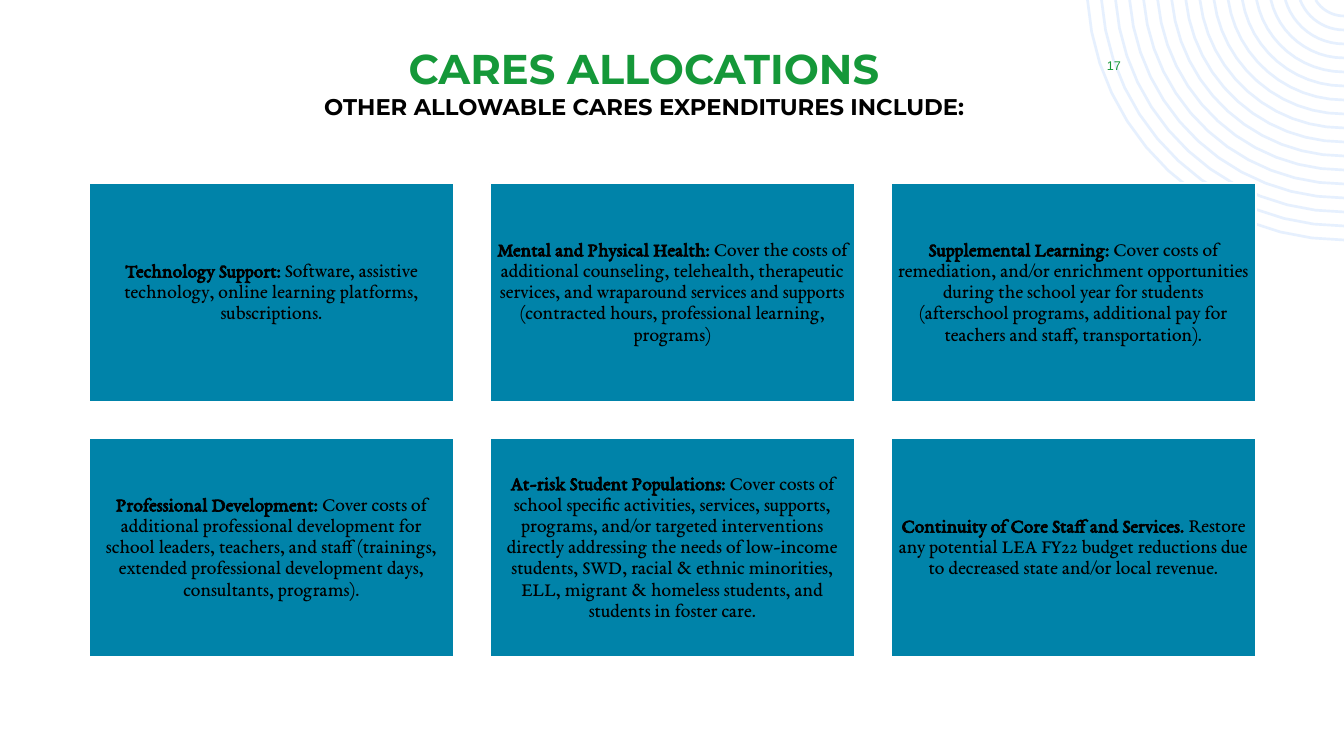
import math

import pptx
import pptx.dml.color
import pptx.enum.shapes
import pptx.enum.text
import pptx.util

EMU_PER_PX = 914400 / 100.8
PAGE_WIDTH, PAGE_HEIGHT = 1344, 756
GREEN, BLUE, PALE_BLUE, BLACK, WHITE = "159839", "0083A9", "E6F0FE", "000000", "FFFFFF"

ANCHOR = pptx.enum.text.MSO_ANCHOR
CENTER = pptx.enum.text.PP_ALIGN.CENTER

TITLE = {"name": "Montserrat", "size": 29.7, "bold": True, "color": GREEN}
SUBTITLE = {"name": "Montserrat", "size": 16.2, "bold": True, "color": BLACK}
NUMBER = {"name": "Arial", "size": 9, "bold": False, "color": GREEN}
CARD_LABEL = {"name": "EB Garamond", "size": 14, "bold": True, "color": BLACK}
CARD_BODY = {**CARD_LABEL, "bold": False}

CARD_LEFT, CARD_TOP = 89, 183
CARD_WIDTH, CARD_HEIGHT = 365, 219
CARD_STEP_X, CARD_STEP_Y = 401, 255
CARD_COLUMNS = 3
CARDS = [
    ("Technology Support: ",
     "Software, assistive technology, online learning platforms, subscriptions."),
    ("Mental and Physical Health: ",
     "Cover the costs of additional counseling, telehealth, therapeutic services, and "
     "wraparound services and supports (contracted hours, professional learning, programs)"),
    ("Supplemental Learning: ",
     "Cover costs of remediation, and/or enrichment opportunities during the school year "
     "for students (afterschool programs, additional pay for teachers and staff, "
     "transportation)."),
    ("Professional Development: ",
     "Cover costs of additional professional development for school leaders, teachers, and "
     "staff (trainings, extended professional development days, consultants, programs)."),
    ("At-risk Student Populations: ",
     "Cover costs of school specific activities, services, supports, programs, and/or "
     "targeted interventions directly addressing the needs of low-income students, SWD, "
     "racial & ethnic minorities, ELL, migrant & homeless students, and students in "
     "foster care."),
    ("Continuity of Core Staff and Services. ",
     "Restore any potential LEA FY22 budget reductions due to decreased state and/or "
     "local revenue."),
]

RING_COUNT, RING_STEP = 17, 14
RING_CENTER_X, RING_CENTER_Y = PAGE_WIDTH, -17
SMALLEST_RADIUS = 33
ARC_STEPS = 12


def px(length):
    return pptx.util.Emu(round(length * EMU_PER_PX))


def color(value):
    return pptx.dml.color.RGBColor.from_string(value)


def set_line(shape, value, points):
    shape.shadow.inherit = False
    shape.line.color.rgb = color(value)
    shape.line.width = pptx.util.Pt(points)


def set_frame(frame, anchor, inset_x, inset_y):
    settings = {
        "word_wrap": True,
        "vertical_anchor": anchor,
        "margin_left": px(inset_x),
        "margin_right": px(inset_x),
        "margin_top": px(inset_y),
        "margin_bottom": px(inset_y),
    }
    for name, value in settings.items():
        setattr(frame, name, value)
    para = frame.paragraphs[0]
    para.alignment = CENTER
    return para


def add_span(para, text, style):
    span = para.add_run()
    span.text = text
    settings = {**style, "size": pptx.util.Pt(style["size"])}
    span.font.color.rgb = color(settings.pop("color"))
    for name, value in settings.items():
        setattr(span.font, name, value)


def add_text_box(page, left, top, width, height, anchor):
    box = page.shapes.add_textbox(px(left), px(top), px(width), px(height))
    return set_frame(box.text_frame, anchor, 10, 5)


def add_card(page, left, top, label, body):
    card = page.shapes.add_shape(
        pptx.enum.shapes.MSO_SHAPE.RECTANGLE,
        px(left), px(top), px(CARD_WIDTH), px(CARD_HEIGHT))
    card.fill.solid()
    card.fill.fore_color.rgb = color(BLUE)
    set_line(card, WHITE, 1.5)
    para = set_frame(card.text_frame, ANCHOR.MIDDLE, 6, 6)
    para.line_spacing = 0.9
    add_span(para, label, CARD_LABEL)
    add_span(para, body, CARD_BODY)


def arc_points(radius):
    start = math.asin(-RING_CENTER_Y / radius)
    angles = [start + (math.pi / 2 - start) * step / ARC_STEPS
              for step in range(ARC_STEPS + 1)]
    return [(px(RING_CENTER_X - radius * math.cos(angle)),
             px(RING_CENTER_Y + radius * math.sin(angle))) for angle in angles]


def add_rings(page):
    first, *others = [arc_points(SMALLEST_RADIUS + ring * RING_STEP)
                      for ring in range(RING_COUNT)]
    builder = page.shapes.build_freeform(*first[0])
    builder.add_line_segments(first[1:], close=False)
    for arc in others:
        builder.move_to(*arc[0])
        builder.add_line_segments(arc[1:], close=False)
    rings = builder.convert_to_shape()
    rings.fill.background()
    set_line(rings, PALE_BLUE, 1.9)


def main():
    deck = pptx.Presentation()
    deck.slide_width, deck.slide_height = px(PAGE_WIDTH), px(PAGE_HEIGHT)
    page = deck.slides.add_slide(deck.slide_layouts[6])

    add_rings(page)

    heading = add_text_box(page, 203, 38, 882, 85, ANCHOR.TOP)
    add_span(heading, "CARES ALLOCATIONS", TITLE)
    heading.add_line_break()
    add_span(heading, "OTHER ALLOWABLE CARES EXPENDITURES INCLUDE:", SUBTITLE)

    number = add_text_box(page, 1073, 50, 82, 30, ANCHOR.MIDDLE)
    add_span(number, "17", NUMBER)

    for index, (label, body) in enumerate(CARDS):
        row, column = divmod(index, CARD_COLUMNS)
        add_card(page, CARD_LEFT + column * CARD_STEP_X,
                 CARD_TOP + row * CARD_STEP_Y, label, body)

    deck.save("out.pptx")


if __name__ == "__main__":
    main()
